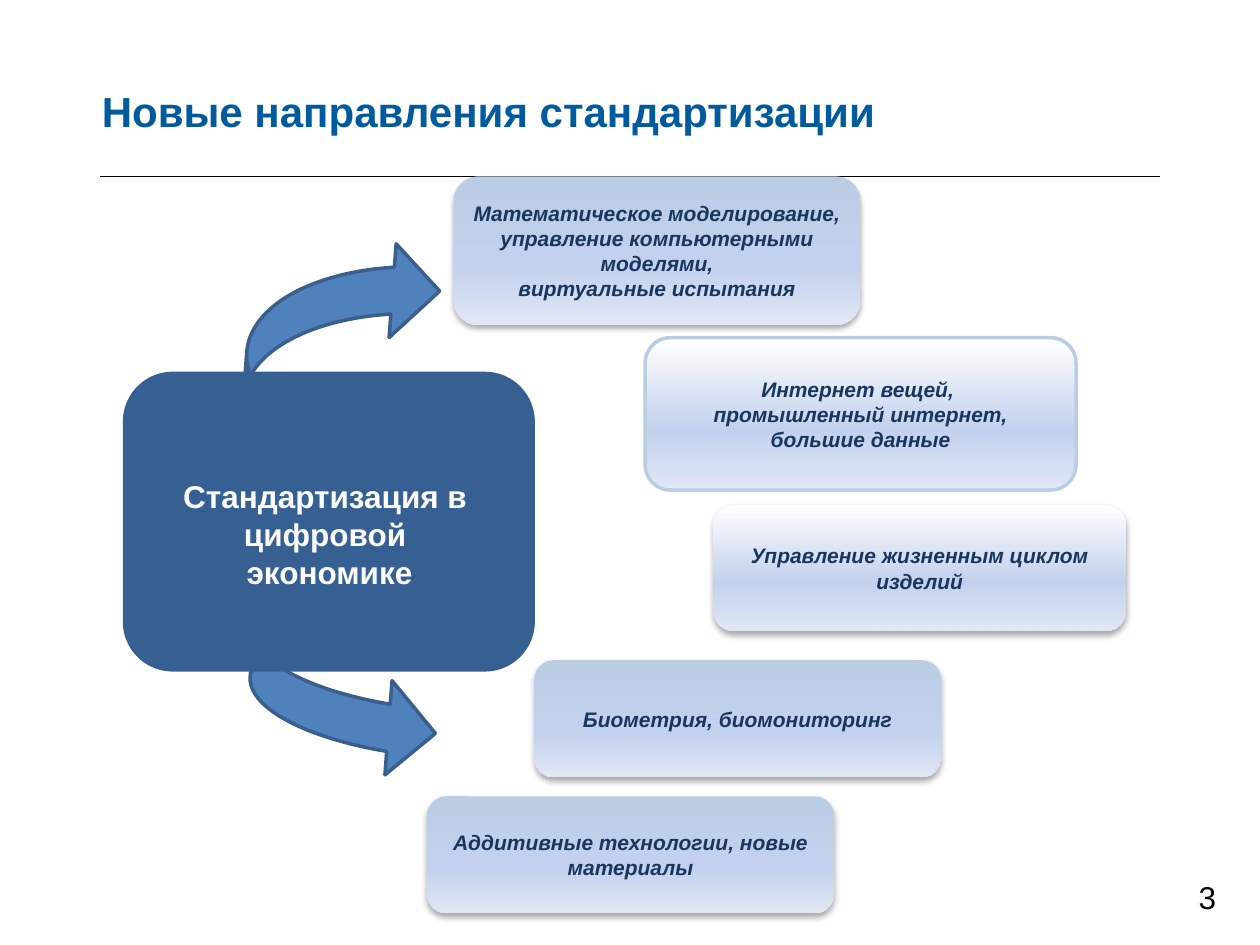
from pptx import Presentation
from pptx.dml.color import RGBColor
from pptx.enum.shapes import MSO_CONNECTOR, MSO_SHAPE
from pptx.enum.text import MSO_ANCHOR, PP_ALIGN
from pptx.oxml import parse_xml
from pptx.oxml.ns import nsdecls
from pptx.util import Inches, Pt

HUE = {"ink": "000000", "title": "005A9E", "navy": "17375E", "core": "376092",
       "arrow": "4F81BD", "edge": "3A5F8C", "pale": "B9CDE5", "white": "FFFFFF",
       "mid": "C2D1ED", "low": "E1E8F5", "snow": "FCFCFF", "glow": "1E7CEE"}
NS = nsdecls("a")

deck = Presentation()
deck.slide_width, deck.slide_height = Inches(10), Inches(7.5)
slide = deck.slides.add_slide(deck.slide_layouts[6])
shapes = slide.shapes
# Grid of 100 columns by 75 rows
col, row = deck.slide_width / 100, deck.slide_height / 75


def place(kind, x, y, wide, high, fill=None, edge=None):
    """Add a shape, or a text box if kind is None, at grid places."""
    area = [int(v) for v in (x * col, y * row, wide * col, high * row)]
    if kind is None:
        return shapes.add_textbox(*area)
    part = shapes.add_shape(kind, *area)
    part.shadow.inherit = False
    if fill:
        part.fill.solid()
        part.fill.fore_color.rgb = RGBColor.from_string(HUE[fill])
    if edge:
        part.line.color.rgb = RGBColor.from_string(HUE[edge])
        part.line.width = Pt(2)
    else:
        part.line.fill.background()
    return part


def write(part, lines, align, hue, wrap=True, **style):
    """Write one paragraph per line and return the runs."""
    frame = part.text_frame
    frame.word_wrap = wrap
    frame.text = "\n".join(lines)
    runs = []
    for para in frame.paragraphs:
        para.alignment = align
        run = para.runs[0]
        run.font.color.rgb = RGBColor.from_string(HUE[hue])
        for key, value in {"name": "Arial", **style}.items():
            setattr(run.font, key, value)
        runs.append(run)
    return runs


# Rule under the title
rule = shapes.add_connector(MSO_CONNECTOR.STRAIGHT, int(7.9 * col), int(14 * row),
                            int(92.1 * col), int(14 * row))
rule.line.color.rgb = RGBColor.from_string(HUE["ink"])
rule.line.width = Pt(0.75)
rule._element.spPr.append(parse_xml(f"<a:effectLst {NS}/>"))

# Page number
page = place(None, 74.2, 69.2, 23.3, 4)
write(page, ["3"], PP_ALIGN.RIGHT, "ink", size=Pt(18))

# Curved arrows, the lower one mirrored
for x, y, wide, high, flip in [(19.9, 45.3, 15, 16.1, True),
                               (19.5, 18.8, 14.9, 21.2, False)]:
    arrow = place(MSO_SHAPE.CURVED_LEFT_ARROW, x, y, wide, high, "arrow", "edge")
    arrow.rotation = 184.3
    if flip:
        arrow._element.spPr.xfrm.set("flipV", "1")

# Central topic
place(MSO_SHAPE.ROUNDED_RECTANGLE, 9.75, 29.5, 32.7, 23.8, "core")
topic = place(MSO_SHAPE.RECTANGLE, 13.4, 37.4, 25.5, 10.1, "core")
topic.text_frame.vertical_anchor = MSO_ANCHOR.TOP
for run in write(topic, ["Стандартизация в ", "цифровой ", "экономике"],
                 PP_ALIGN.CENTER, "snow", wrap=False, size=Pt(18), bold=True):
    run.font._element.insert(0, parse_xml(
        f'<a:ln {NS} w="{Pt(0.07)}"><a:solidFill><a:srgbClr val="{HUE["glow"]}">'
        '<a:alpha val="55000"/></a:srgbClr></a:solidFill></a:ln>'))

# Direction cards: x, y, width, height, top colour, edge, lines
cards = [
    (36, 14, 32.3, 11.8, "pale", None,
     ["Математическое моделирование, управление компьютерными моделями,",
      "виртуальные испытания"]),
    (51.2, 26.8, 34.2, 12.1, "white", "pale",
     ["Интернет вещей, ", "промышленный интернет,", "большие данные"]),
    (56.6, 40.1, 32.8, 10, "white", None, ["Управление жизненным циклом изделий"]),
    (42.4, 52.4, 32.3, 9.3, "pale", None, ["Биометрия, биомониторинг"]),
    (33.9, 63.2, 32.3, 9.3, "pale", None, ["Аддитивные технологии, новые материалы"]),
]
for x, y, wide, high, top, edge, lines in cards:
    card = place(MSO_SHAPE.FLOWCHART_ALTERNATE_PROCESS, x, y, wide, high, edge=edge)
    stops = "".join(f'<a:gs pos="{pos}000"><a:srgbClr val="{HUE[hue]}"/></a:gs>'
                    for pos, hue in [(0, top), (61, "mid"), (100, "low")])
    props = card._element.spPr
    props.find("{*}prstGeom").addnext(parse_xml(
        f'<a:gradFill {NS} rotWithShape="1"><a:gsLst>{stops}</a:gsLst>'
        '<a:lin ang="5400000" scaled="0"/></a:gradFill>'))
    if not edge:
        props.find("{*}effectLst").append(parse_xml(
            f'<a:outerShdw {NS} blurRad="{Pt(3.5)}" dist="{Pt(2.2)}" dir="5400000" '
            f'rotWithShape="0"><a:srgbClr val="{HUE["ink"]}"><a:alpha val="32000"/>'
            '</a:srgbClr></a:outerShdw>'))
    card.text_frame.vertical_anchor = MSO_ANCHOR.MIDDLE
    write(card, lines, PP_ALIGN.CENTER, "navy", size=Pt(12), bold=True, italic=True)

# Title
title = place(None, 7.1, 2.6, 82.9, 9.9)
title.text_frame.margin_top = int(4.2 * row)
write(title, ["Новые направления стандартизации"], PP_ALIGN.LEFT, "title",
      size=Pt(24), bold=True)

deck.save("out.pptx")
